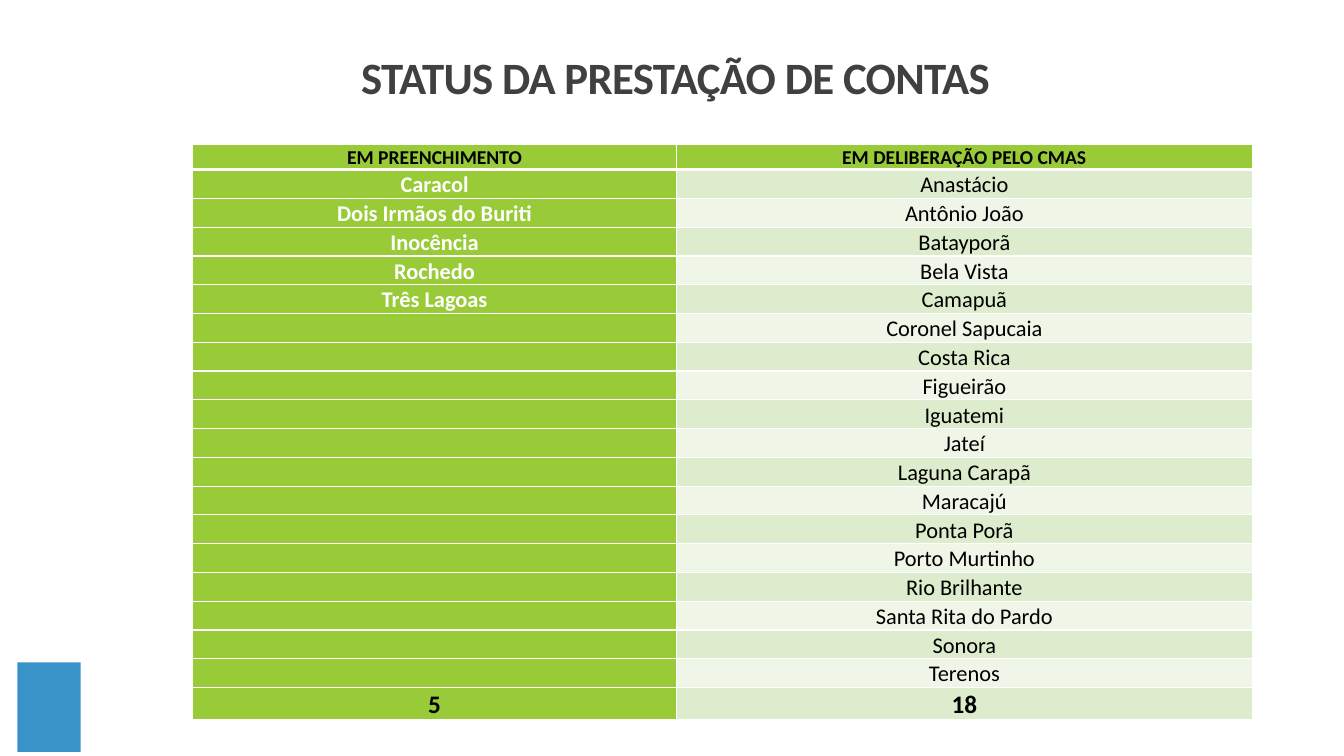
from dataclasses import dataclass
from itertools import zip_longest

from lxml.etree import SubElement
from pptx import Presentation
from pptx.dml.color import RGBColor
from pptx.enum.shapes import MSO_SHAPE
from pptx.enum.text import MSO_ANCHOR, PP_ALIGN
from pptx.oxml import parse_xml
from pptx.oxml.ns import nsdecls, qn
from pptx.slide import Slide
from pptx.table import _Cell
from pptx.text.text import _Paragraph
from pptx.util import Inches, Pt

# Slide size, split into 100 columns and 100 rows
WIDE, HIGH = Inches(13.33), Inches(7.5)


@dataclass(frozen=True)
class Theme:
    font: str = "Calibri"
    title: str = "404040"
    dark: str = "000000"
    light: str = "FFFFFF"
    accent: str = "3992C8"
    green: str = "99CB38"
    bands: tuple[str, str] = ("DEECCE", "EFF6E8")
    title_size: int = 32
    head_size: int = 14
    body_size: int = 16
    total_size: int = 18
    title_lead: float = 0.85
    cell_lead: float = 1.07


@dataclass(frozen=True)
class Box:
    col: float
    row: float
    cols: float
    rows: float

    def place(self) -> tuple[int, int, int, int]:
        return (across(self.col), down(self.row),
                across(self.cols), down(self.rows))


@dataclass(frozen=True)
class Style:
    size: int
    color: str
    bold: bool
    lead: float


@dataclass(frozen=True)
class Row:
    texts: tuple[str, str]
    styles: tuple[Style, Style]
    fills: tuple[str, str]
    height: float
    top: int = 1
    bottom: int = 1


THEME = Theme()
TITLE = Box(9, 4.13, 82.52, 10.27)
MARK = Box(1.3, 87.6, 4.7, 11.85)
TABLE = Box(14.33, 19.1, 78.84, 76.1)
COLUMNS = (36.01, 42.83)
HEAD_ROW, BODY_ROW, TOTAL_ROW = 3.2, 3.6, 4

HEADS = ("EM PREENCHIMENTO", "EM DELIBERAÇÃO PELO CMAS")
FILLING = ("Caracol", "Dois Irmãos do Buriti", "Inocência", "Rochedo",
           "Três Lagoas")
REVIEW = ("Anastácio", "Antônio João", "Batayporã", "Bela Vista", "Camapuã",
          "Coronel Sapucaia", "Costa Rica", "Figueirão", "Iguatemi", "Jateí",
          "Laguna Carapã", "Maracajú", "Ponta Porã", "Porto Murtinho",
          "Rio Brilhante", "Santa Rita do Pardo", "Sonora", "Terenos")


def across(cols: float) -> int:
    return round(WIDE * cols / 100)


def down(rows: float) -> int:
    return round(HIGH * rows / 100)


def write(para: _Paragraph, text: str, style: Style) -> None:
    para.alignment = PP_ALIGN.CENTER
    para.line_spacing = style.lead
    font = para.font
    font.name, font.size, font.bold = THEME.font, Pt(style.size), style.bold
    font.color.rgb = RGBColor.from_string(style.color)
    if text:
        para.add_run().text = text
    else:
        # An empty line takes its height from its end mark
        SubElement(para._p, qn("a:endParaRPr"), sz=str(style.size * 100))


def border(cell: _Cell, top: int, bottom: int) -> None:
    sides = (("L", 1), ("R", 1), ("T", top), ("B", bottom))
    for spot, (side, width) in enumerate(sides):
        line = parse_xml(
            f'<a:ln{side} {nsdecls("a")} w="{Pt(width)}"><a:solidFill>'
            f'<a:srgbClr val="{THEME.light}"/></a:solidFill></a:ln{side}>')
        cell._tc.get_or_add_tcPr().insert(spot, line)


def add_title(slide: Slide, text: str) -> None:
    frame = slide.shapes.add_textbox(*TITLE.place()).text_frame
    frame.word_wrap = True
    frame.vertical_anchor = MSO_ANCHOR.BOTTOM
    para = frame.paragraphs[0]
    write(para, text, Style(THEME.title_size, THEME.title, True,
                            THEME.title_lead))
    para.runs[0]._r.get_or_add_rPr().set("spc", "-50")


def add_mark(slide: Slide) -> None:
    mark = slide.shapes.add_shape(MSO_SHAPE.RECTANGLE, *MARK.place())
    mark.shadow.inherit = False
    mark.fill.solid()
    mark.fill.fore_color.rgb = RGBColor.from_string(THEME.accent)
    mark.line.fill.background()


def list_rows() -> list[Row]:
    lead = THEME.cell_lead
    head = Style(THEME.head_size, THEME.dark, True, lead)
    left = Style(THEME.body_size, THEME.light, True, lead)
    right = Style(THEME.body_size, THEME.dark, False, lead)
    total = Style(THEME.total_size, THEME.dark, True, lead)
    rows = [Row(HEADS, (head, head), (THEME.green, THEME.green),
                HEAD_ROW, bottom=3)]
    pairs = zip_longest(FILLING, REVIEW, fillvalue="")
    for spot, pair in enumerate(pairs):
        rows.append(Row(pair, (left, right),
                        (THEME.green, THEME.bands[spot % 2]), BODY_ROW,
                        top=1 if spot else 3))
    counts = (str(len(FILLING)), str(len(REVIEW)))
    rows.append(Row(counts, (total, total), (THEME.green, THEME.bands[0]),
                    TOTAL_ROW))
    return rows


def add_grid(slide: Slide, rows: list[Row]) -> None:
    frame = slide.shapes.add_table(len(rows), len(COLUMNS), *TABLE.place())
    table = frame.table
    for column, width in zip(table.columns, COLUMNS):
        column.width = across(width)
    for line, row in zip(table.rows, rows):
        line.height = down(row.height)
        for cell, text, style, fill in zip(line.cells, row.texts,
                                           row.styles, row.fills):
            cell.margin_left = cell.margin_right = Inches(0.07)
            cell.margin_top = cell.margin_bottom = 0
            cell.fill.solid()
            cell.fill.fore_color.rgb = RGBColor.from_string(fill)
            border(cell, row.top, row.bottom)
            write(cell.text_frame.paragraphs[0], text, style)


def main() -> None:
    deck = Presentation()
    deck.slide_width, deck.slide_height = WIDE, HIGH
    slide = deck.slides.add_slide(deck.slide_layouts[6])
    add_mark(slide)
    add_title(slide, "STATUS DA PRESTAÇÃO DE CONTAS")
    add_grid(slide, list_rows())
    deck.save("out.pptx")


if __name__ == "__main__":
    main()
